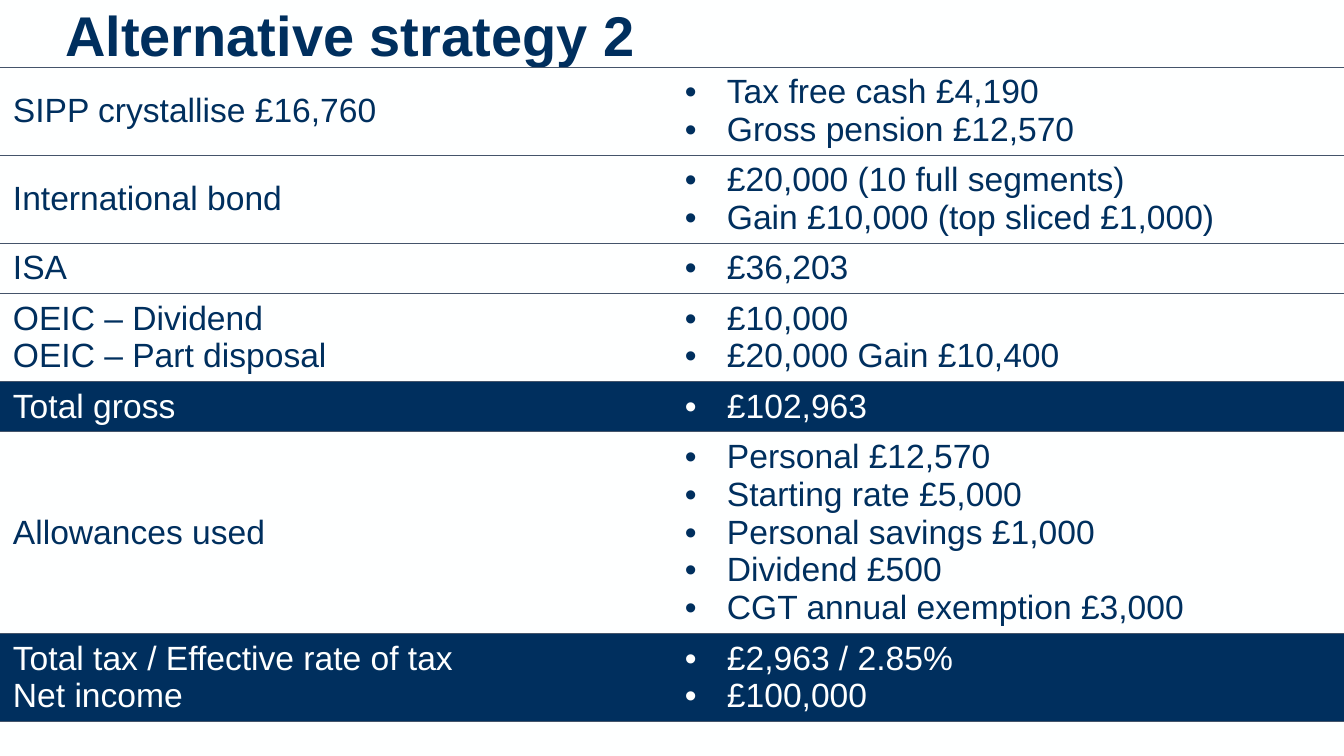
"""Builds the slide of the second alternative income strategy."""
from lxml import etree
from pptx import Presentation
from pptx import util as u
from pptx.dml.color import RGBColor
from pptx.enum import text
from pptx.oxml import ns

PX = 914400 / 134.4
NAVY = RGBColor(0x00, 0x2F, 0x5E)
WHITE = RGBColor(0xFE, 0xFF, 0xFF)
RULE = RGBColor(0x44, 0x54, 0x6A)
FONT = "Arial"
ROWS = [
    (["SIPP crystallise £16,760"],
     ["Tax free cash £4,190", "Gross pension £12,570"], False),
    (["International bond"],
     ["£20,000 (10 full segments)", "Gain £10,000 (top sliced £1,000)"], False),
    (["ISA"], ["£36,203"], False),
    (["OEIC – Dividend", "OEIC – Part disposal"],
     ["£10,000", "£20,000 Gain £10,400"], False),
    (["Total gross"], ["£102,963"], True),
    (["Allowances used"],
     ["Personal £12,570", "Starting rate £5,000", "Personal savings £1,000",
      "Dividend £500", "CGT annual exemption £3,000"], False),
    (["Total tax / Effective rate of tax", "Net income"],
     ["£2,963 / 2.85%", "£100,000"], True),
]


def px(length):
    """Turn pixels into EMU."""
    return u.Emu(round(length * PX))


def row_height(line_count):
    """Give the height in pixels of a row with this many text lines."""
    return 13 + line_count * 75 // 2


def row_margin(line_count):
    """Give the top and bottom margin in pixels that keeps a row at its height."""
    return max(0, 6 - line_count * 3 // 2)


def style_font(font, size, color, bold=False):
    """Set the typeface, size, colour and weight."""
    font.name = FONT
    font.size = u.Pt(size)
    font.bold = bold
    font.color.rgb = color


def add_title(slide, title):
    """Add the slide title."""
    box = slide.shapes.add_textbox(px(52), px(3), px(1251), px(80))
    box.text_frame.word_wrap = True
    box.text_frame.text = title
    paragraph = box.text_frame.paragraphs[0]
    paragraph.line_spacing = u.Pt(31)
    style_font(paragraph.runs[0].font, 30, NAVY, True)


def set_borders(cell):
    """Draw hairlines above and below a cell and none at its sides."""
    properties = cell._tc.get_or_add_tcPr()
    for side in "LRTB":
        line = etree.SubElement(properties, ns.qn(f"a:ln{side}"), w=str(u.Pt(0.25)))
        if side in "LR":
            etree.SubElement(line, ns.qn("a:noFill"))
        else:
            fill = etree.SubElement(line, ns.qn("a:solidFill"))
            etree.SubElement(fill, ns.qn("a:srgbClr"), val=str(RULE))


def set_indent(paragraph, indent, bullet):
    """Give a paragraph a hanging indent, with a bullet if wanted."""
    properties = paragraph._p.get_or_add_pPr()
    properties.set("marL", str(px(indent)))
    properties.set("indent", str(px(-indent)))
    if bullet:
        etree.SubElement(properties, ns.qn("a:buFont"), typeface=FONT)
        etree.SubElement(properties, ns.qn("a:buChar"), char="•")
    else:
        etree.SubElement(properties, ns.qn("a:buNone"))


def fill_cell(cell, lines, margin, bullet, highlighted):
    """Write the lines of a cell and style it."""
    cell.margin_left = cell.margin_right = px(13)
    cell.margin_top = cell.margin_bottom = px(margin)
    cell.vertical_anchor = text.MSO_ANCHOR.MIDDLE
    set_borders(cell)
    if highlighted:
        cell.fill.solid()
        cell.fill.fore_color.rgb = NAVY
    else:
        cell.fill.background()
    cell.text_frame.text = "\n".join(lines)
    for paragraph in cell.text_frame.paragraphs:
        set_indent(paragraph, 42 if bullet else 27, bullet)
        style_font(paragraph.runs[0].font, 18, WHITE if highlighted else NAVY)


def add_strategy_table(slide):
    """Add the table of income sources, allowances and totals."""
    heights = [row_height(len(details)) for _, details, _ in ROWS]
    frame = slide.shapes.add_table(len(ROWS), 2, 0, px(67), px(1344), px(sum(heights)))
    table = frame.table
    table.first_row = table.horz_banding = False
    for index, (labels, details, highlighted) in enumerate(ROWS):
        table.rows[index].height = px(heights[index])
        margin = row_margin(len(details))
        fill_cell(table.cell(index, 0), labels, margin, False, highlighted)
        fill_cell(table.cell(index, 1), details, margin, True, highlighted)


def main():
    """Build and save the presentation."""
    presentation = Presentation()
    presentation.slide_width = px(1344)
    presentation.slide_height = px(756)
    slide = presentation.slides.add_slide(presentation.slide_layouts[6])
    slide.background.fill.solid()
    slide.background.fill.fore_color.rgb = WHITE
    add_title(slide, "Alternative strategy 2")
    add_strategy_table(slide)
    presentation.save("out.pptx")


if __name__ == "__main__":
    main()
